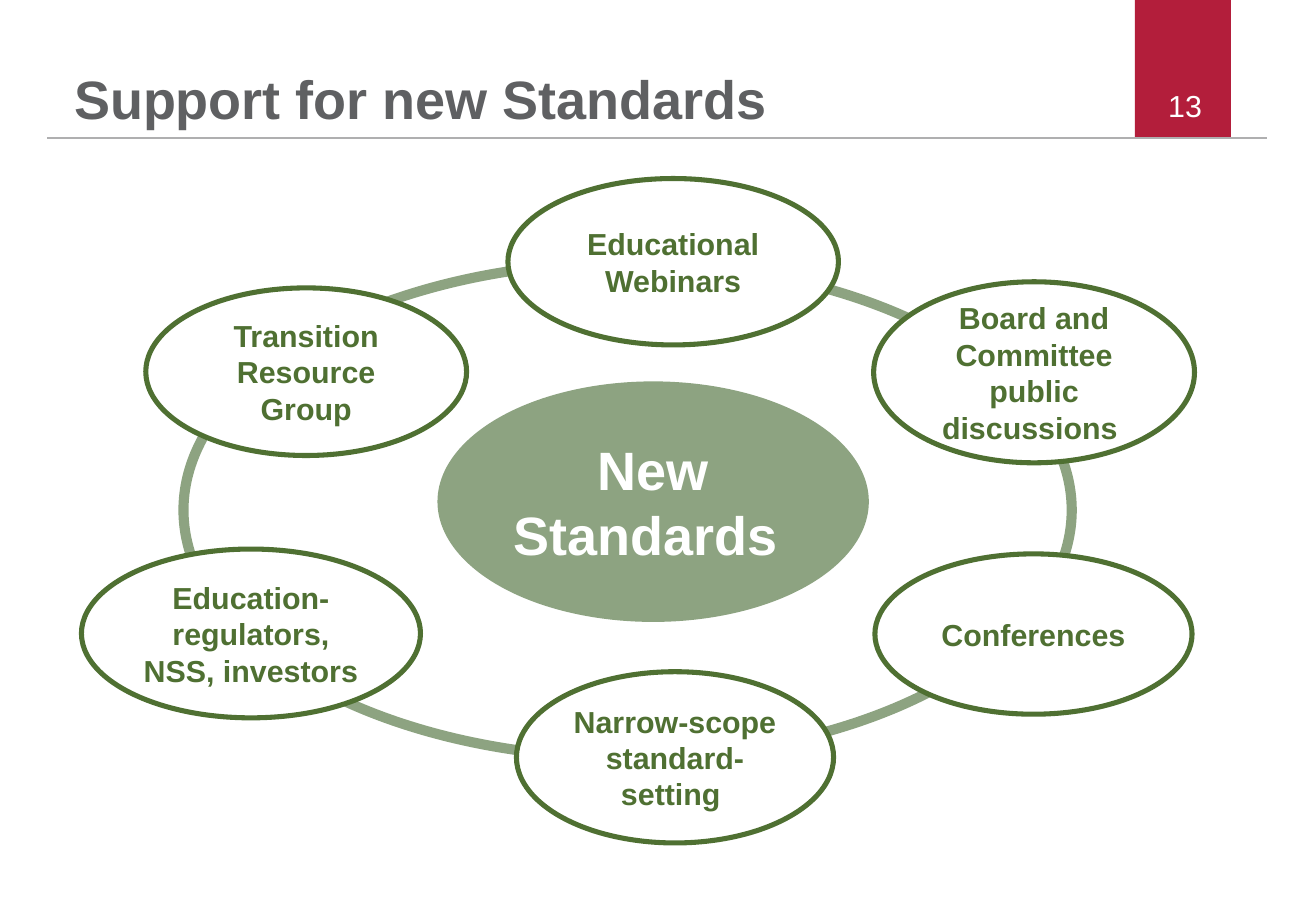
import pptx
import pptx.util
import pptx.dml.color
import pptx.enum.shapes
import pptx.enum.text
import pptx.oxml.ns
import lxml.etree

PX = 9144
COLORS = {
    "white": "FFFFFF",
    "red": "B31E3B",
    "rule": "AFAFB0",
    "title": "5F6062",
    "sage": "8DA381",
    "green": "4F7032",
}
MSO = pptx.enum.shapes.MSO_SHAPE
ALIGN = pptx.enum.text.PP_ALIGN
ANCHOR = pptx.enum.text.MSO_ANCHOR


def rgb(name):
    return pptx.dml.color.RGBColor.from_string(COLORS[name])


def write(sp, text, size, color, bold, align, anchor, insets):
    tf = sp.text_frame
    tf.word_wrap = True
    tf.vertical_anchor = anchor
    tf.margin_left = tf.margin_right = insets[0] * PX
    tf.margin_top = tf.margin_bottom = insets[1] * PX
    tf.text = text
    p = tf.paragraphs[0]
    p.alignment = align
    r = p.runs[0]
    r.font.name = "Arial"
    r.font.size = pptx.util.Pt(size)
    r.font.bold = bold
    r.font.color.rgb = rgb(color)
    return p


prs = pptx.Presentation()
prs.slide_width = 1083 * PX
prs.slide_height = 750 * PX
s = prs.slides.add_slide(prs.slide_layouts[6])

shapes = [
    (MSO.RECTANGLE, (934, 0, 79, 114), "red", None, 0, "", 0, ""),
    (MSO.OVAL, (151, 216, 731, 408), None, "sage", 6, "", 0, ""),
    (MSO.OVAL, (360, 314, 355, 198), "sage", None, 0, "New Standards ", 32, "white"),
]
topics = [
    ("Board and Committee public discussions ", (719, 232, 264, 149)),
    ("Transition Resource Group", (120, 237, 264, 138)),
    ("Educational Webinars", (418, 147, 272, 137)),
    ("Education- regulators, NSS, investors", (67, 452, 279, 139)),
    ("Conferences", (720, 456, 261, 132)),
    ("Narrow-scope standard-setting ", (425, 553, 261, 141)),
]
for text, box in topics:
    shapes.append((MSO.OVAL, box, "white", "green", 3, text, 18, "green"))

for kind, box, fill, line, width, text, size, color in shapes:
    sp = s.shapes.add_shape(kind, *[v * PX for v in box])
    sp.shadow.inherit = False
    if fill:
        sp.fill.solid()
        sp.fill.fore_color.rgb = rgb(fill)
    else:
        sp.fill.background()
    if line:
        sp.line.color.rgb = rgb(line)
        sp.line.width = pptx.util.Pt(width)
    else:
        sp.line.fill.background()
    if text:
        write(sp, text, size, color, True, ALIGN.CENTER, ANCHOR.MIDDLE, (8, 4))

rule = s.shapes.add_connector(
    pptx.enum.shapes.MSO_CONNECTOR.STRAIGHT, 39 * PX, 114 * PX, 1043 * PX, 114 * PX)
rule.line.color.rgb = rgb("rule")
rule.line.width = pptx.util.Pt(1.2)
lxml.etree.SubElement(rule._element.spPr, pptx.oxml.ns.qn("a:effectLst"))

number = s.shapes.add_textbox(746 * PX, 67 * PX, 253 * PX, 40 * PX)
write(number, "13", 18, "white", False, ALIGN.RIGHT, ANCHOR.MIDDLE, (10, 5))

title = s.shapes.add_textbox(61 * PX, 21 * PX, 766 * PX, 87 * PX)
p = write(title, "Support for new Standards", 32, "title", True, ALIGN.LEFT, ANCHOR.BOTTOM, (0, 0))
p.line_spacing = 0.9

prs.save("out.pptx")
